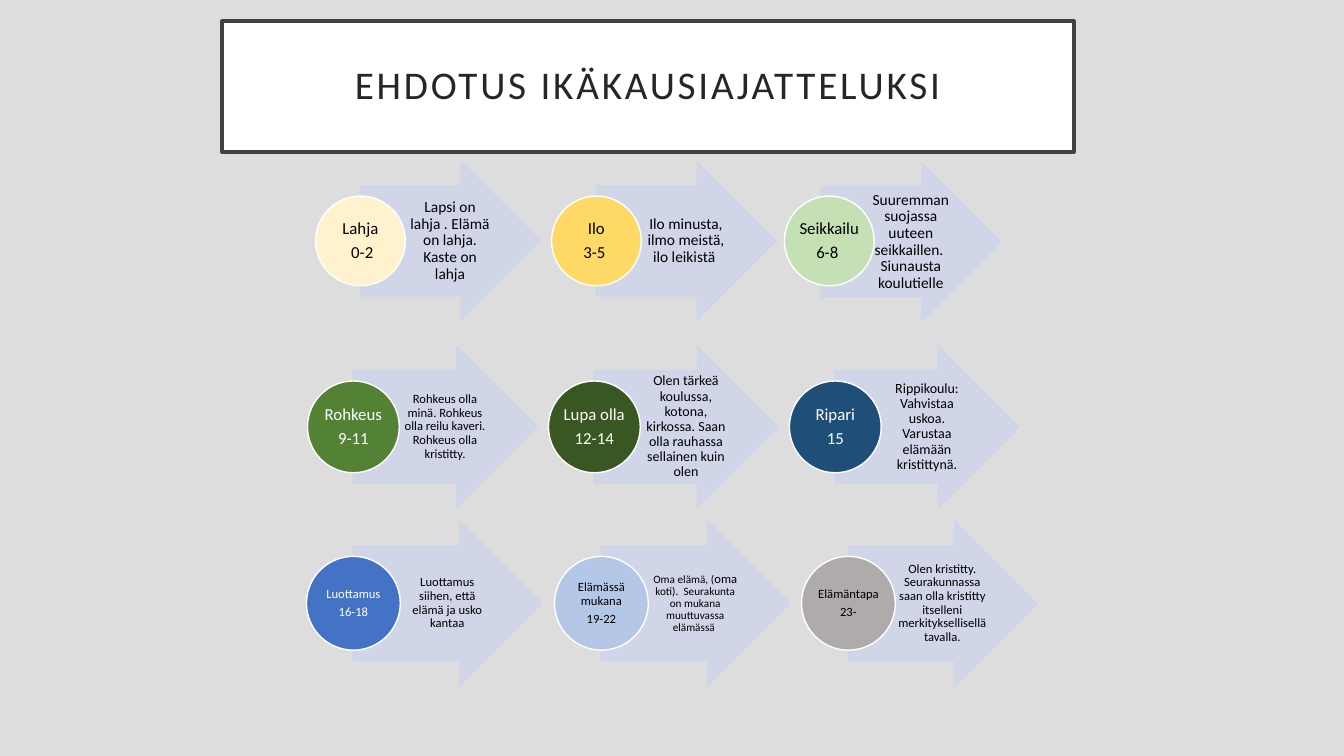
"""Build a slide of nine age stages, each a circle on an arrow, in three rows."""
from math import sqrt

from lxml.etree import SubElement
from pptx import Presentation
from pptx.dml.color import RGBColor
from pptx.enum.shapes import MSO_SHAPE as Shape
from pptx.enum.text import MSO_ANCHOR as Anchor, PP_ALIGN as Align
from pptx.oxml.ns import qn
from pptx.util import Emu, Pt

EMU_PER_PX = 9144
FONT = "Calibri"
BLACK, WHITE = "000000", "FFFFFF"
ARROW_COLOR = "CFD5EA"
ARROW_OPACITY = 90

PROMISE_FRAME = {"margin_left": 3, "margin_top": 1, "margin_right": 1, "margin_bottom": 1}
LABEL_FRAME = dict.fromkeys(PROMISE_FRAME, 1)
TITLE_FRAME = dict.fromkeys(PROMISE_FRAME, 20)

ROWS = [
    {
        "top": 161, "arrow": (178, 156), "circle": 89, "lefts": (313, 547, 778),
        "stages": [
            ("FFF2CC", BLACK, 12, ["Lahja", " 0-2"],
             [("Lapsi on lahja . Elämä on lahja. Kaste on lahja", 11, BLACK)], (0, 0)),
            ("FFD966", BLACK, 12, ["Ilo", "3-5 "],
             [("Ilo minusta, ilmo meistä, ilo leikistä ", 11, BLACK)], (0, 0)),
            ("C5E0B4", BLACK, 12, ["Seikkailu", "6-8 "],
             [("Suuremman suojassa uuteen seikkaillen.  Siunausta koulutielle", 11, BLACK)],
             (-8, 1)),
        ],
    },
    {
        "top": 344, "arrow": (182, 159), "circle": 91, "lefts": (305, 544, 783),
        "stages": [
            ("548235", WHITE, 12, ["Rohkeus", "9-11"],
             [("Rohkeus olla minä. Rohkeus olla reilu kaveri. Rohkeus olla kristitty.",
               9, BLACK)], (0, 0)),
            ("385723", WHITE, 12, ["Lupa olla", "12-14"],
             [("Olen tärkeä koulussa, kotona, kirkossa. Saan olla rauhassa "
               "sellainen kuin olen", 10, BLACK)], (0, 0)),
            ("1F4E79", WHITE, 12, ["Ripari", "15"],
             [("Rippikoulu: Vahvistaa uskoa. Varustaa elämään kristittynä.",
               10, BLACK)], (0, 0)),
        ],
    },
    {
        "top": 517, "arrow": (187, 163), "circle": 93, "lefts": (304, 550, 795),
        "stages": [
            ("4472C4", WHITE, 9, ["Luottamus", "16-18"],
             [("Luottamus siihen, että elämä ja usko kantaa", 9, BLACK)], (0, 0)),
            ("B4C7E7", BLACK, 9, ["Elämässä mukana", "19-22"],
             [("Oma elämä, (", 8, BLACK), ("oma", 9, BLACK),
              (" koti).  Seurakunta on mukana muuttuvassa elämässä", 8, BLACK),
              (".", 8, "E7E6E6")], (0, 0)),
            ("AFABAB", BLACK, 9, ["Elämäntapa", "23-"],
             [("Olen kristitty. Seurakunnassa saan olla kristitty itselleni "
               "merkityksellisellä tavalla.", 9, BLACK)], (0, 0)),
        ],
    },
]


def px(length):
    return Emu(round(length * EMU_PER_PX))


def rgb(code):
    return RGBColor.from_string(code)


def set_values(target, values):
    for name, value in values.items():
        setattr(target, name, value)


def write(frame, paragraphs, margins, spacing=0.35, tracking=0):
    set_values(frame, {"word_wrap": True, "vertical_anchor": Anchor.MIDDLE})
    set_values(frame, {side: px(margin) for side, margin in margins.items()})
    for index, runs in enumerate(paragraphs):
        paragraph = frame.add_paragraph() if index else frame.paragraphs[0]
        set_values(paragraph, {
            "alignment": Align.CENTER,
            "line_spacing": 0.9,
            "space_after": Pt(spacing * runs[0][1]),
        })
        for words, size, color in runs:
            run = paragraph.add_run()
            run.text = words
            set_values(run.font, {"name": FONT, "size": Pt(size)})
            run.font.color.rgb = rgb(color)
            if tracking:
                run.font._element.set("spc", str(tracking * 100))


def add_preset(shapes, preset, box, fill, line, width):
    preset_shape = shapes.add_shape(preset, *map(px, box))
    preset_shape.shadow.inherit = False
    preset_shape.fill.solid()
    preset_shape.fill.fore_color.rgb = rgb(fill)
    preset_shape.line.color.rgb = rgb(line)
    preset_shape.line.width = Pt(width)
    return preset_shape


def add_arrow(shapes, box):
    arrow = add_preset(shapes, Shape.RIGHT_ARROW, box, ARROW_COLOR, ARROW_COLOR, 1)
    arrow.adjustments[0], arrow.adjustments[1] = 0.7, 0.5
    for color in arrow._element.spPr.iter(qn("a:srgbClr")):
        SubElement(color, qn("a:alpha"), val=str(ARROW_OPACITY * 1000))


def add_text(shapes, box, paragraphs, margins):
    write(shapes.add_textbox(*map(px, box)).text_frame, paragraphs, margins)


def add_stage(shapes, row, left, stage):
    fill, ink, label_size, label, promise, (shift_x, shift_y) = stage
    width, height = row["arrow"]
    circle = row["circle"]
    arrow_left = left + circle / 2 + shift_x
    arrow_top = row["top"] + shift_y
    add_arrow(shapes, (arrow_left, arrow_top, width, height))

    promise_box = (arrow_left + circle / 2, arrow_top + 0.15 * height,
                   0.4875 * width, 0.7 * height)
    add_text(shapes, promise_box, [promise], PROMISE_FRAME)

    circle_top = row["top"] + (height - circle) / 2
    add_preset(shapes, Shape.OVAL, (left, circle_top, circle, circle), fill, WHITE, 1)

    side = circle / sqrt(2)
    inset = (circle - side) / 2
    add_text(shapes, (left + inset, circle_top + inset, side, side),
             [[(words, label_size, ink)] for words in label], LABEL_FRAME)


def add_title(shapes):
    banner = add_preset(shapes, Shape.RECTANGLE, (220, 21, 845, 130), WHITE, "404040", 2.5)
    write(banner.text_frame, [[("EHDOTUS IKÄKAUSIAJATTELUKSI", 28, "262626")]],
          TITLE_FRAME, spacing=0, tracking=2)


def main():
    deck = Presentation()
    set_values(deck, {"slide_width": px(1333), "slide_height": px(750)})
    slide = deck.slides.add_slide(deck.slide_layouts[6])
    slide.background.fill.solid()
    slide.background.fill.fore_color.rgb = rgb("DDDDDD")

    add_title(slide.shapes)
    for row in ROWS:
        stage_group = slide.shapes.add_group_shape()
        for left, stage in zip(row["lefts"], row["stages"]):
            add_stage(stage_group.shapes, row, left, stage)
    deck.save("out.pptx")


if __name__ == "__main__":
    main()
